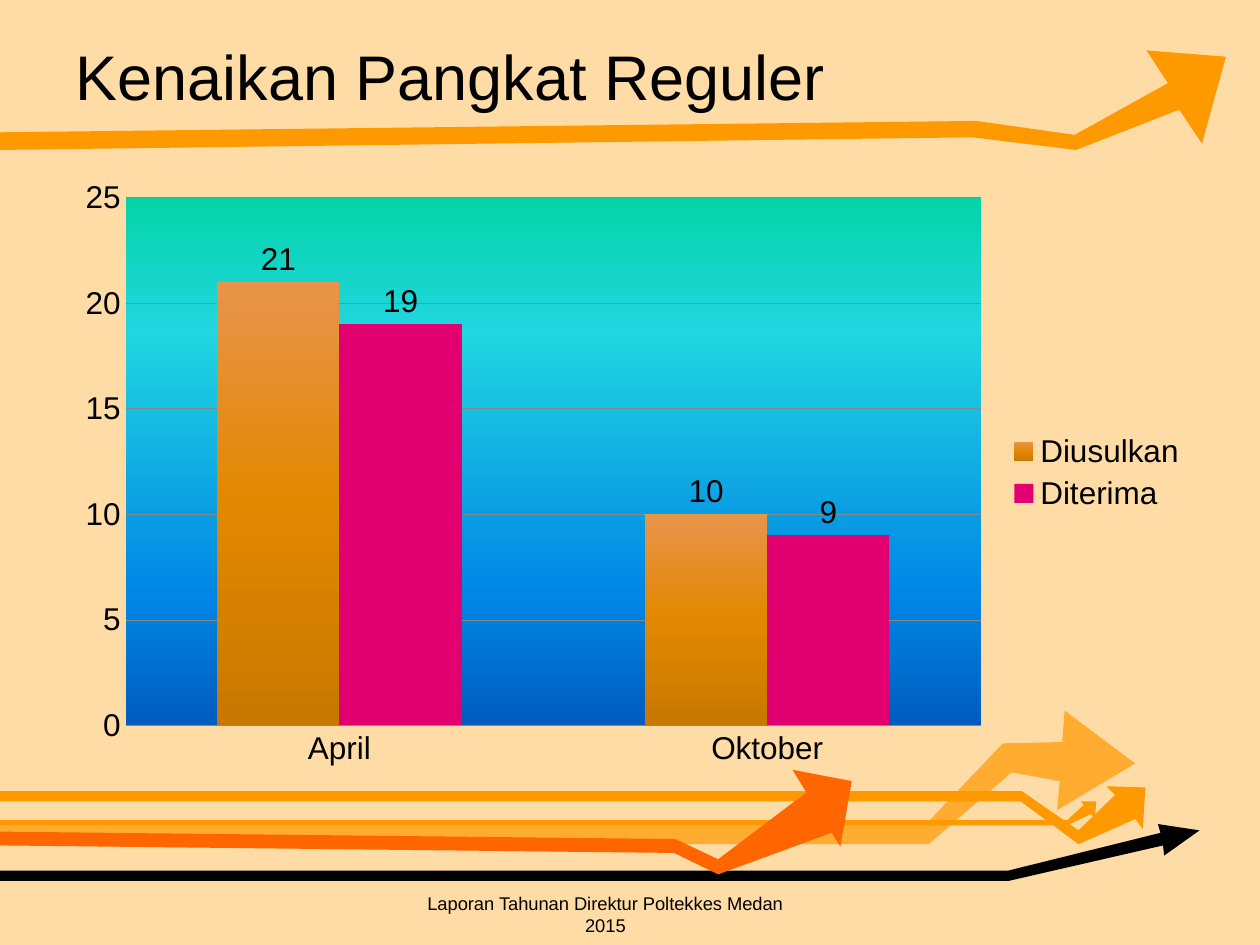
import dataclasses

import lxml.etree
import pptx
import pptx.chart.data
import pptx.dml.color
import pptx.enum.chart
import pptx.enum.text
import pptx.oxml
import pptx.oxml.ns
import pptx.util

Inches = pptx.util.Inches
Pt = pptx.util.Pt
qn = pptx.oxml.ns.qn


@dataclasses.dataclass(frozen=True)
class Theme:
    font: str = "Arial"
    title_size: float = 36
    chart_size: float = 18
    footer_size: float = 10.5
    background: str = "FFDBA6"
    text: str = "000000"
    orange: str = "FF9900"
    light_orange: str = "FFAC31"
    red_orange: str = "FF6600"
    pink: str = "E20071"
    grid: str = "7F8C8D"
    plot_stops: tuple = ((0, "03D4A8"), (25, "21D6E0"), (75, "0087E6"), (100, "005CBF"))
    bar_stops: tuple = ((0, "E8944A"), (50, "E28800"), (100, "C87800"))


@dataclasses.dataclass(frozen=True)
class Box:
    left: float
    top: float
    width: float
    height: float

    def lengths(self):
        return [Inches(v) for v in (self.left, self.top, self.width, self.height)]


THEME = Theme()

# Arrow outlines, in inches from the top left of their region
HEADER_ARROWS = [
    (THEME.orange, [(0, 0.79), (7.72, 0.69), (8.54, 0.79), (9.36, 0.47), (9.54, 0.74),
                    (9.73, 0.05), (9.1, 0), (9.27, 0.26), (8.53, 0.67), (7.75, 0.56),
                    (0, 0.65)]),
]
BOTTOM_ARROWS = [
    (THEME.light_orange, [(0, 0.89), (7.36, 0.89), (7.96, 0.26), (8.43, 0.25), (8.45, 0),
                          (9.01, 0.42), (8.39, 0.79), (8.41, 0.56), (8.03, 0.49),
                          (7.37, 1.06), (0, 1.06)]),
    (THEME.orange, [(0, 0.87), (8.47, 0.87), (8.6, 0.75), (8.58, 0.72), (8.7, 0.72),
                    (8.69, 0.86), (8.66, 0.82), (8.47, 0.91), (0, 0.91)]),
    (THEME.orange, [(0, 0.64), (8.11, 0.64), (8.56, 0.95), (8.85, 0.67), (8.78, 0.6),
                    (9.09, 0.61), (9.07, 0.94), (9.01, 0.86), (8.56, 1.06), (8.1, 0.72),
                    (0, 0.72)]),
    (THEME.text, [(0, 1.27), (8, 1.27), (9.21, 0.97), (9.19, 0.9), (9.52, 0.95),
                  (9.24, 1.15), (9.23, 1.07), (8.01, 1.35), (0, 1.35)]),
    (THEME.red_orange, [(-0.05, 1.07), (5.35, 1.13), (5.7, 1.3), (6.6, 0.97), (6.67, 1.08),
                        (6.76, 0.56), (6.29, 0.47), (6.4, 0.65), (5.7, 1.18), (5.36, 1.02),
                        (-0.08, 0.96)]),
]


def rgb(value):
    return pptx.dml.color.RGBColor.from_string(value)


def style_font(font, size):
    font.name = THEME.font
    font.size = Pt(size)
    font.color.rgb = rgb(THEME.text)


def gradient_fill(stops):
    """Vertical gradient, first stop at the top."""
    stop_xml = "".join(
        f'<a:gs pos="{position * 1000}"><a:srgbClr val="{color}"/></a:gs>'
        for position, color in stops)
    return pptx.oxml.parse_xml(
        f'<a:gradFill {pptx.oxml.ns.nsdecls("a")}><a:gsLst>{stop_xml}</a:gsLst>'
        '<a:lin ang="5400000" scaled="0"/></a:gradFill>')


def add_arrows(slide, box, arrows):
    left, top = box.lengths()[:2]
    for color, outline in arrows:
        points = [(Inches(x), Inches(y)) for x, y in outline]
        builder = slide.shapes.build_freeform(*points[0])
        builder.add_line_segments(points[1:], close=True)
        shape = builder.convert_to_shape(left, top)
        shape.shadow.inherit = False
        shape.fill.solid()
        shape.fill.fore_color.rgb = rgb(color)
        shape.line.fill.background()


def add_title(slide, box, text):
    title = slide.shapes.title
    title.left, title.top, title.width, title.height = box.lengths()
    frame = title.text_frame
    frame.text = text
    frame.vertical_anchor = pptx.enum.text.MSO_ANCHOR.MIDDLE
    frame.auto_size = pptx.enum.text.MSO_AUTO_SIZE.NONE
    frame.paragraphs[0].alignment = pptx.enum.text.PP_ALIGN.LEFT
    style_font(frame.paragraphs[0].font, THEME.title_size)
    # Bring the title in front of the arrows
    slide.shapes.element.append(title.element)


def format_plot_area(chart, x, y, width, height):
    """Fix the inner plot box, as fractions of the chart, and shade it."""
    plot_area = chart.element.find(".//" + qn("c:plotArea"))
    for layout in plot_area.findall(qn("c:layout")):
        plot_area.remove(layout)
    layout = pptx.oxml.parse_xml(
        f'<c:layout {pptx.oxml.ns.nsdecls("c")}><c:manualLayout>'
        '<c:layoutTarget val="inner"/><c:xMode val="edge"/><c:yMode val="edge"/>'
        f'<c:x val="{x}"/><c:y val="{y}"/><c:w val="{width}"/><c:h val="{height}"/>'
        '</c:manualLayout></c:layout>')
    plot_area.insert(0, layout)
    shading = lxml.etree.SubElement(plot_area, qn("c:spPr"))
    shading.append(gradient_fill(THEME.plot_stops))


def add_promotion_chart(slide, box):
    data = pptx.chart.data.CategoryChartData()
    data.categories = ["April", "Oktober"]
    data.add_series("Diusulkan", (21, 10))
    data.add_series("Diterima", (19, 9))
    chart = slide.shapes.add_chart(
        pptx.enum.chart.XL_CHART_TYPE.COLUMN_CLUSTERED, *box.lengths(), data).chart
    chart.has_title = False
    style_font(chart.font, THEME.chart_size)
    chart.has_legend = True
    chart.legend.position = pptx.enum.chart.XL_LEGEND_POSITION.RIGHT
    chart.legend.include_in_layout = False

    # Axes
    for axis in (chart.category_axis, chart.value_axis):
        axis.major_tick_mark = pptx.enum.chart.XL_TICK_MARK.NONE
        axis.minor_tick_mark = pptx.enum.chart.XL_TICK_MARK.NONE
        axis.format.line.fill.background()
    value_axis = chart.value_axis
    value_axis.minimum_scale, value_axis.maximum_scale = 0, 25
    value_axis.major_unit = 5
    value_axis.has_major_gridlines = True
    grid_line = value_axis.major_gridlines.format.line
    grid_line.color.rgb = rgb(THEME.grid)
    grid_line.width = Pt(0.25)

    # Columns and their labels
    plot = chart.plots[0]
    plot.vary_by_categories = False
    plot.gap_width, plot.overlap = 150, 0
    plot.has_data_labels = True
    plot.data_labels.show_value = True
    plot.data_labels.position = pptx.enum.chart.XL_LABEL_POSITION.OUTSIDE_END
    style_font(plot.data_labels.font, THEME.chart_size)
    proposed, accepted = plot.series
    proposed._element.get_or_add_spPr().append(gradient_fill(THEME.bar_stops))
    accepted.format.fill.solid()
    accepted.format.fill.fore_color.rgb = rgb(THEME.pink)
    format_plot_area(chart, 0.055, 0.049, 0.753, 0.866)


def add_footer(slide, box, text):
    frame = slide.shapes.add_textbox(*box.lengths()).text_frame
    frame.word_wrap = True
    frame.text = text
    frame.paragraphs[0].alignment = pptx.enum.text.PP_ALIGN.CENTER
    style_font(frame.paragraphs[0].font, THEME.footer_size)


def main():
    presentation = pptx.Presentation()
    presentation.slide_width, presentation.slide_height = Inches(10), Inches(7.5)
    slide = presentation.slides.add_slide(presentation.slide_layouts[5])
    slide.background.fill.solid()
    slide.background.fill.fore_color.rgb = rgb(THEME.background)

    add_arrows(slide, Box(0, 5.64, 10, 1.35), BOTTOM_ARROWS)
    add_arrows(slide, Box(0, 0.4, 10, 0.8), HEADER_ARROWS)
    add_title(slide, Box(0.5, 0.28, 9.07, 0.63), "Kenaikan Pangkat Reguler")
    add_promotion_chart(slide, Box(0.5, 1.33, 9.02, 4.84))
    add_footer(slide, Box(3.22, 7.03, 3.17, 0.31),
               "Laporan Tahunan Direktur Poltekkes Medan 2015")
    presentation.save("out.pptx")


if __name__ == "__main__":
    main()
